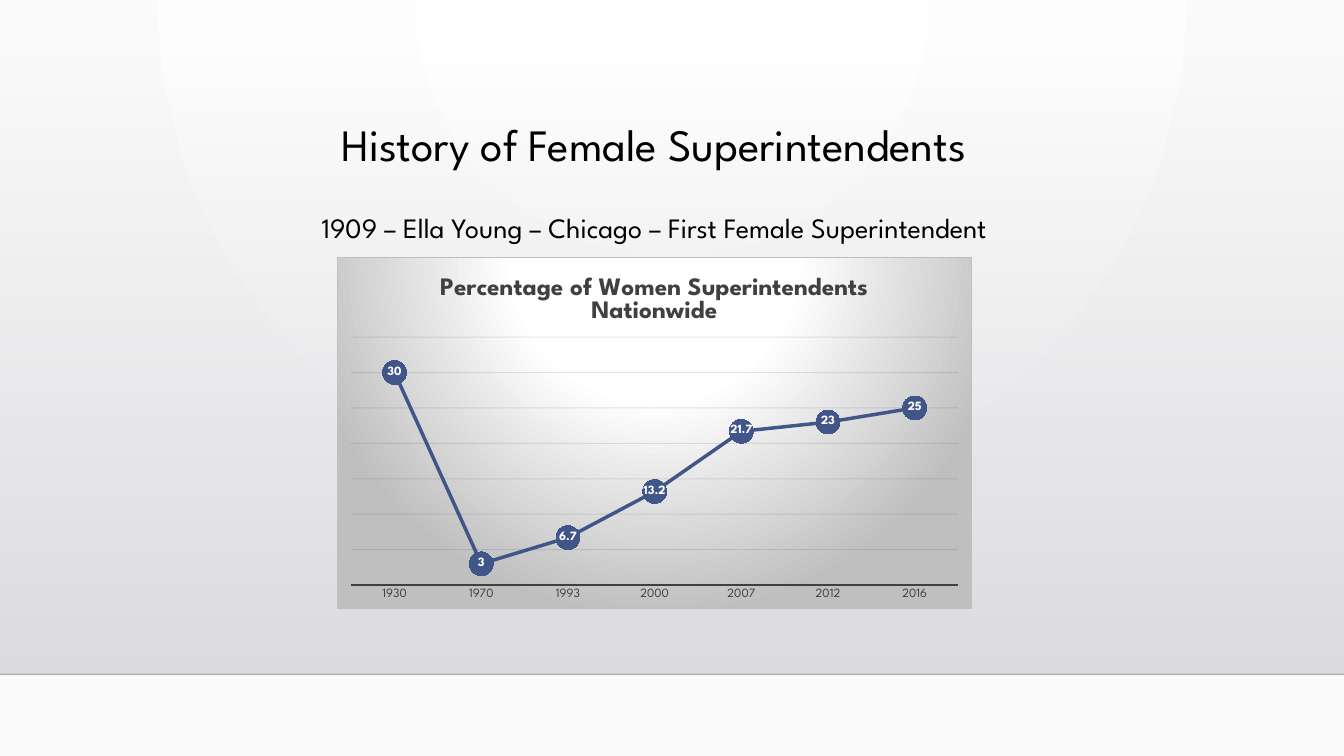
from lxml import etree
from pptx import Presentation, util as u
from pptx.chart.data import CategoryChartData
from pptx.dml.color import RGBColor
from pptx.enum import chart as charts, shapes, text
from pptx.oxml import parse_xml
from pptx.oxml.ns import nsdecls, qn

# Content
TITLE = "History of Female Superintendents"
SUBTITLE = "1909 – Ella Young – Chicago – First Female Superintendent"
CHART_TITLE = "Percentage of Women Superintendents Nationwide"
SHARES = {"1930": 30, "1970": 3, "1993": 6.7, "2000": 13.2,
          "2007": 21.7, "2012": 23, "2016": 25}

# Style
FONT = "League Spartan"
BLACK = RGBColor(0x00, 0x00, 0x00)
WHITE = RGBColor(0xFF, 0xFF, 0xFF)
PAPER = RGBColor(0xFA, 0xFA, 0xFA)
MIST_TOP = RGBColor(0xDC, 0xDC, 0xE0)
MIST_BOTTOM = RGBColor(0xDE, 0xDE, 0xE2)
SILVER = RGBColor(0xBF, 0xBF, 0xBF)
CHARCOAL = RGBColor(0x40, 0x40, 0x40)
GRID = RGBColor(0x0D, 0x0D, 0x0D)
BLUE = RGBColor(0x41, 0x55, 0x88)

# Layout in inches: left, top, width, height
WIDTH, HEIGHT = 13.33, 7.5
FLOOR = 6.69
MIST_BOX = (0, 0.51, WIDTH, FLOOR - 0.51)
TITLE_BOX = (1.24, 1.04, 10.5, 1.15)
SUBTITLE_BOX = (1.24, 1.83, 10.5, 4.15)
CHART_BOX = (3.34, 2.55, 6.3, 3.49)
PLOT_SHARES = {"x": 0.022, "y": 0.227, "w": 0.957, "h": 0.707}


def inches(box):
    return [u.Inches(length) for length in box]


def gradient(stops, direction):
    """Build a gradient fill from (position, colour, opacity) in percent."""
    marks = "".join(
        f'<a:gs pos="{position * 1000}"><a:srgbClr val="{color}">'
        f'<a:alpha val="{opacity * 1000}"/></a:srgbClr></a:gs>'
        for position, color, opacity in stops)
    return parse_xml(f'<a:gradFill {nsdecls("a")} rotWithShape="1">'
                     f'<a:gsLst>{marks}</a:gsLst>{direction}</a:gradFill>')


def circle(left, top, right, bottom):
    sides = zip("ltrb", (left, top, right, bottom))
    rect = " ".join(f'{side}="{share * 1000}"' for side, share in sides)
    return f'<a:path path="circle"><a:fillToRect {rect}/></a:path>'


def style_line(line, color, width, opacity=100):
    line.color.rgb = color
    line.width = u.Pt(width)
    if opacity < 100:
        for tint in line.fill._xPr.iter(qn("a:srgbClr")):
            etree.SubElement(tint, qn("a:alpha")).set("val", str(opacity * 1000))


def style_font(font, size, color, bold=False):
    font.name, font.size, font.bold = FONT, u.Pt(size), bold
    font.color.rgb = color


def add_heading(slide, box, wording, size, spacing, margin_top):
    frame = slide.shapes.add_textbox(*inches(box)).text_frame
    frame.word_wrap = True
    frame.vertical_anchor = text.MSO_ANCHOR.TOP
    frame.margin_top = u.Inches(margin_top)
    paragraph = frame.paragraphs[0]
    paragraph.alignment = text.PP_ALIGN.CENTER
    paragraph.line_spacing = spacing
    run = paragraph.add_run()
    run.text = wording
    style_font(run.font, size, BLACK)


def add_backdrop(slide):
    # Soft spotlight from the top
    slide.background.fill.solid()
    properties = slide.element.find(".//" + qn("p:bgPr"))
    properties.replace(properties[0], gradient(
        [(0, WHITE, 100), (100, PAPER, 100)], circle(43, 0, 43, 100)))

    # Mist that thickens towards the floor
    mist = slide.shapes.add_shape(shapes.MSO_SHAPE.RECTANGLE, *inches(MIST_BOX))
    mist.shadow.inherit = False
    mist.line.fill.background()
    mist.fill.solid()
    solid = mist.element.spPr.find(qn("a:solidFill"))
    mist.element.spPr.replace(solid, gradient(
        [(0, MIST_TOP, 0), (100, MIST_BOTTOM, 100)],
        '<a:lin ang="5400000" scaled="0"/>'))

    # Floor line
    floor = slide.shapes.add_connector(
        shapes.MSO_CONNECTOR.STRAIGHT, *inches((0, FLOOR, WIDTH, FLOOR)))
    style_line(floor.line, BLACK, 1, 20)
    etree.SubElement(floor.element.spPr, qn("a:effectLst"))


def add_share_chart(slide):
    data = CategoryChartData()
    data.categories = list(SHARES)
    data.add_series(CHART_TITLE, list(SHARES.values()))
    chart = slide.shapes.add_chart(
        charts.XL_CHART_TYPE.LINE_MARKERS, *inches(CHART_BOX), data).chart
    style_font(chart.font, 10, BLACK)
    chart.has_legend = False

    # Chart title
    chart.has_title = True
    chart.chart_title.include_in_layout = False
    run = chart.chart_title.text_frame.paragraphs[0].add_run()
    run.text = CHART_TITLE
    style_font(run.font, 18, CHARCOAL, bold=True)

    # Axes
    years, values = chart.category_axis, chart.value_axis
    years.major_tick_mark = years.minor_tick_mark = charts.XL_TICK_MARK.NONE
    style_font(years.tick_labels.font, 9, CHARCOAL)
    style_line(years.format.line, CHARCOAL, 1.5)
    values.minimum_scale, values.maximum_scale, values.major_unit = 0, 35, 5
    values.has_major_gridlines = True
    style_line(values.major_gridlines.format.line, GRID, 0.75, 10)
    values.visible = False

    # Series with labels inside its markers
    plot = chart.plots[0]
    plot.vary_by_categories = False
    series = plot.series[0]
    series.smooth = False
    style_line(series.format.line, BLUE, 2.5)
    series.marker.style = charts.XL_MARKER_STYLE.CIRCLE
    series.marker.size = 17
    series.marker.format.fill.solid()
    series.marker.format.fill.fore_color.rgb = BLUE
    series.marker.format.line.fill.background()
    labels = series.data_labels
    labels.show_value = True
    labels.position = charts.XL_LABEL_POSITION.CENTER
    style_font(labels.font, 9, WHITE, bold=True)

    # Plot position
    area = chart.element.find(".//" + qn("c:plotArea"))
    for old in area.findall(qn("c:layout")):
        area.remove(old)
    sizes = "".join(f'<c:{side} val="{share}"/>'
                    for side, share in PLOT_SHARES.items())
    area.insert(0, parse_xml(
        f'<c:layout {nsdecls("c")}><c:manualLayout><c:layoutTarget val="inner"/>'
        f'<c:xMode val="edge"/><c:yMode val="edge"/>{sizes}'
        '</c:manualLayout></c:layout>'))

    # Square panel with a shaded fill and thin border
    chart.element.find(qn("c:date1904")).addnext(
        parse_xml(f'<c:roundedCorners {nsdecls("c")} val="0"/>'))
    panel = parse_xml(
        f'<c:spPr {nsdecls("c", "a")}><a:ln w="{u.Pt(0.75)}"><a:solidFill>'
        f'<a:srgbClr val="{SILVER}"/></a:solidFill></a:ln></c:spPr>')
    panel.insert(0, gradient(
        [(0, WHITE, 100), (39, WHITE, 100), (100, SILVER, 100)],
        circle(50, -80, 50, 180)))
    chart.element.find(qn("c:chart")).addnext(panel)


def main():
    presentation = Presentation()
    presentation.slide_width, presentation.slide_height = inches((WIDTH, HEIGHT))
    slide = presentation.slides.add_slide(presentation.slide_layouts[6])
    add_backdrop(slide)
    add_heading(slide, TITLE_BOX, TITLE, 32, 0.9, 0.18)
    add_heading(slide, SUBTITLE_BOX, SUBTITLE, 20, 1.2, 0.19)
    add_share_chart(slide)
    presentation.save("out.pptx")


if __name__ == "__main__":
    main()
